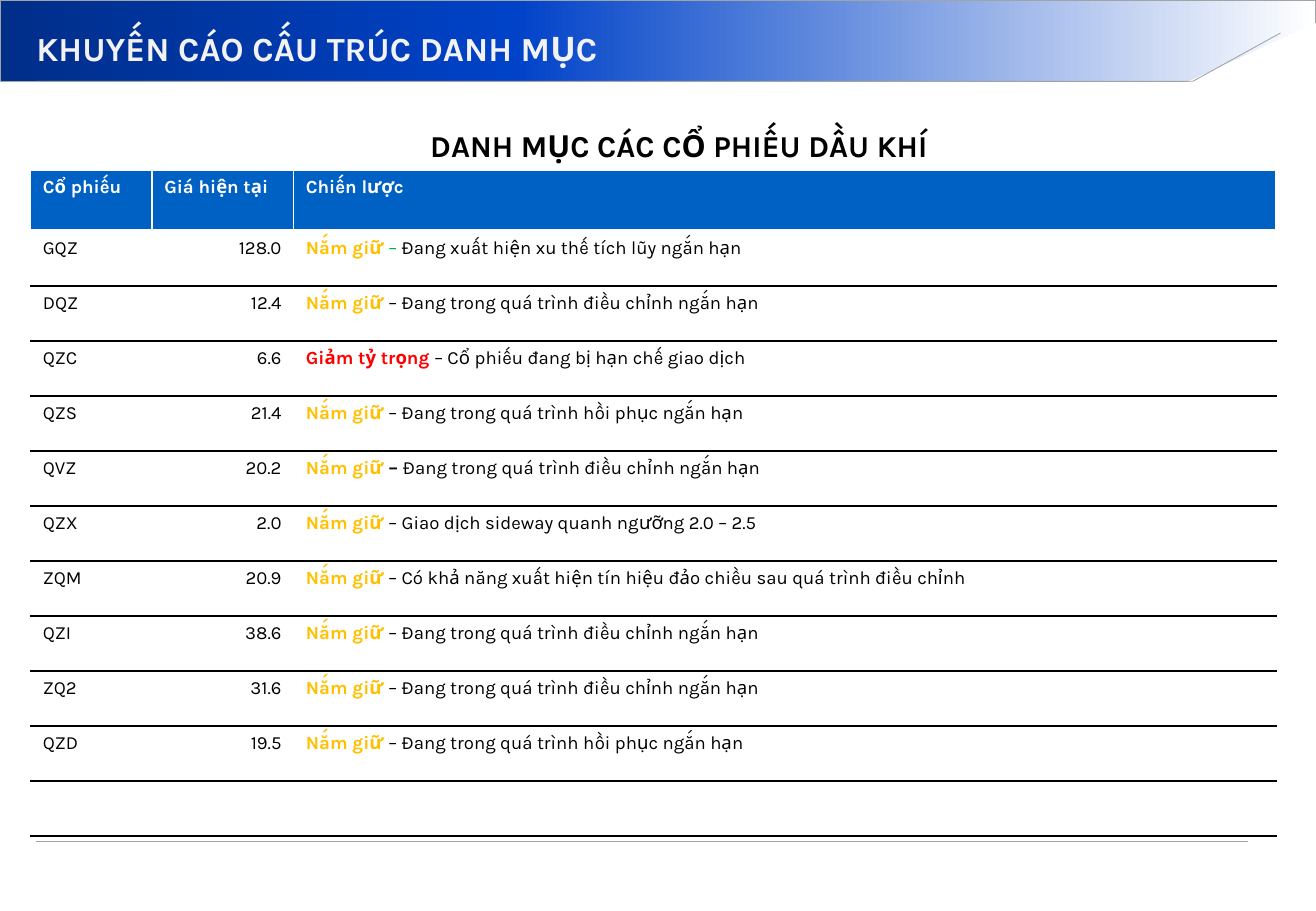
import copy
import pptx
import pptx.dml.color
import pptx.enum.shapes
import pptx.enum.text
import pptx.oxml
import pptx.oxml.ns
import pptx.util
from lxml import etree

Cm = pptx.util.Cm
Pt = pptx.util.Pt
SHAPE = pptx.enum.shapes.MSO_SHAPE
ALIGN = pptx.enum.text.PP_ALIGN
ANCHOR = pptx.enum.text.MSO_ANCHOR
FIT = pptx.enum.text.MSO_AUTO_SIZE

HUES = {
    "navy": "002E89", "royal": "0042C8", "blue": "0061C4",
    "white": "FFFFFF", "pale": "F2F2F2", "grey": "A0A4A7",
    "black": "000000", "ink": "0D0D0D", "gold": "FFC000",
    "red": "FF0000", "green": "00B050",
}
FONT = "Karla"
HEADS = ["Cổ phiếu", "Giá hiện tại", "Chiến lược"]
HOLD, CUT = "Nắm giữ ", "Giảm tỷ trọng "
DOWN = "Đang trong quá trình điều chỉnh ngắn hạn"
UP = "Đang trong quá trình hồi phục ngắn hạn"
TONES = {HOLD: "gold", CUT: "red"}
DASHES = {"GQZ": ("green", False), "QVZ": ("ink", True)}
STOCKS = [
    ("GQZ", "128.0", HOLD, "Đang xuất hiện xu thế tích lũy ngắn hạn"),
    ("DQZ", "12.4", HOLD, DOWN),
    ("QZC", "6.6", CUT, "Cổ phiếu đang bị hạn chế giao dịch"),
    ("QZS", "21.4", HOLD, UP),
    ("QVZ", "20.2", HOLD, DOWN),
    ("QZX", "2.0", HOLD, "Giao dịch sideway quanh ngưỡng 2.0 – 2.5"),
    ("ZQM", "20.9", HOLD, "Có khả năng xuất hiện tín hiệu đảo chiều sau quá trình điều chỉnh"),
    ("QZI", "38.6", HOLD, DOWN),
    ("ZQ2", "31.6", HOLD, DOWN),
    ("QZD", "19.5", HOLD, UP),
]


def hue(name):
    return pptx.dml.color.RGBColor.from_string(HUES[name])


def put(item, form):
    for key, value in form.items():
        setattr(item, key, value)


def write(para, parts, size, align):
    para.alignment = align
    for text, tone, bold in parts:
        run = para.add_run()
        run.text = text
        put(run.font, {"name": FONT, "size": Pt(size), "bold": bold})
        run.font.color.rgb = hue(tone)


def stroke(line):
    line.color.rgb = hue("grey")
    line.width = Pt(0.5)


def fade(fill, stops):
    fill.gradient()
    fill.gradient_angle = 0
    first = fill.gradient_stops[0]._gs
    first.addnext(copy.deepcopy(first))
    for stop, (place, tone) in zip(fill.gradient_stops, stops):
        stop.position = place
        stop.color.rgb = hue(tone)


def banner(slide, left, top, width, height):
    bar = slide.shapes.add_shape(SHAPE.RECTANGLE, left, top, width, height)
    bar.shadow.inherit = False
    fade(bar.fill, [(0, "navy"), (0.39, "royal"), (1, "white")])
    stroke(bar.line)

    wide, tall = Cm(2.77), Cm(1.27)
    notch = slide.shapes.add_shape(
        SHAPE.RIGHT_TRIANGLE, left + width - wide, top + Cm(0.48), wide, tall)
    notch.shadow.inherit = False
    notch.fill.solid()
    notch.fill.fore_color.rgb = hue("white")
    notch.line.fill.background()
    notch._element.spPr.find(pptx.oxml.ns.qn("a:xfrm")).set("flipH", "1")

    pen = slide.shapes.build_freeform(left + Cm(0.76), top + height)
    pen.add_line_segments([
        (left + Cm(24.94), top + height), (left + Cm(26.77), top + Cm(0.69)),
    ], close=False)
    edge = pen.convert_to_shape()
    edge.shadow.inherit = False
    edge.fill.background()
    stroke(edge.line)

    title = slide.shapes.title
    put(title, {"left": left + Cm(0.76), "top": top + Cm(0.46),
                "width": Cm(24.05), "height": Cm(1.09)})
    frame = title.text_frame
    put(frame, {"margin_left": 0, "margin_top": 0, "margin_right": 0, "margin_bottom": 0,
                "vertical_anchor": ANCHOR.MIDDLE, "auto_size": FIT.NONE})
    write(frame.paragraphs[0], [("KHUYẾN CÁO CẤU TRÚC DANH MỤC", "pale", True)], 20, ALIGN.LEFT)
    slide.shapes._spTree.append(title._element)


def caption(slide, left, top, width, height):
    frame = slide.shapes.add_textbox(left, top, width, height).text_frame
    frame.word_wrap = True
    write(frame.paragraphs[0], [("DANH MỤC CÁC CỔ PHIẾU DẦU KHÍ", "black", True)], 18, ALIGN.CENTER)


def border(cell, sides):
    props = cell._tc.get_or_add_tcPr()
    for side, (tone, size) in zip("LRTB", sides):
        line = etree.SubElement(
            props, pptx.oxml.ns.qn("a:ln" + side), w=str(Pt(size)))
        fill = etree.SubElement(line, pptx.oxml.ns.qn("a:solidFill"))
        etree.SubElement(fill, pptx.oxml.ns.qn("a:srgbClr"), val=HUES[tone])


def advise(code, verb, note):
    tone, bold = DASHES.get(code, ("black", False))
    return [(verb, TONES[verb], True), ("– ", tone, bold), (note, "black", False)]


def listing(slide, left, top, width, height):
    rows = [[[(head, "white", True)] for head in HEADS]]
    for code, price, verb, note in STOCKS:
        rows.append([[(code, "black", False)], [(price, "black", False)],
                     advise(code, verb, note)])
    rows.append([[], [], []])

    grid = slide.shapes.add_table(len(rows), len(HEADS), left, top, width, height).table
    first, second, head = Cm(2.54), Cm(2.96), Cm(1.27)
    for col, span in zip(grid.columns, [first, second, width - first - second]):
        col.width = span
    for row in grid.rows:
        row.height = (height - head) // (len(rows) - 1)
    grid.rows[0].height = head

    white, black, thick = ("white", 1), ("black", 1), ("white", 3)
    for r, row in enumerate(rows):
        upper = white if r == 0 else thick if r == 1 else black
        lower = thick if r == 0 else black
        for c, parts in enumerate(row):
            cell = grid.cell(r, c)
            border(cell, [white, white, upper, lower])
            if r == 0:
                cell.fill.solid()
                cell.fill.fore_color.rgb = hue("blue")
            else:
                cell.fill.background()
            align = ALIGN.RIGHT if r and c == 1 else ALIGN.LEFT
            write(cell.text_frame.paragraphs[0], parts, 11, align)


def footer(slide, left, top, width):
    rule = slide.shapes.add_connector(
        pptx.enum.shapes.MSO_CONNECTOR.STRAIGHT, left, top, left + width, top)
    stroke(rule.line)
    etree.SubElement(rule._element.spPr, pptx.oxml.ns.qn("a:effectLst"))


def main():
    deck = pptx.Presentation()
    put(deck, {"slide_width": Cm(27.51), "slide_height": Cm(19.05)})
    slide = deck.slides.add_slide(deck.slide_layouts.get_by_name("Title Only"))
    banner(slide, 0, 0, deck.slide_width, Cm(1.7))
    footer(slide, Cm(0.76), Cm(17.6), Cm(25.32))
    caption(slide, Cm(6.15), Cm(2.54), Cm(16.08), Cm(1.02))
    listing(slide, Cm(0.64), Cm(3.56), Cm(26.03), Cm(13.92))
    deck.save("out.pptx")


if __name__ == "__main__":
    main()
